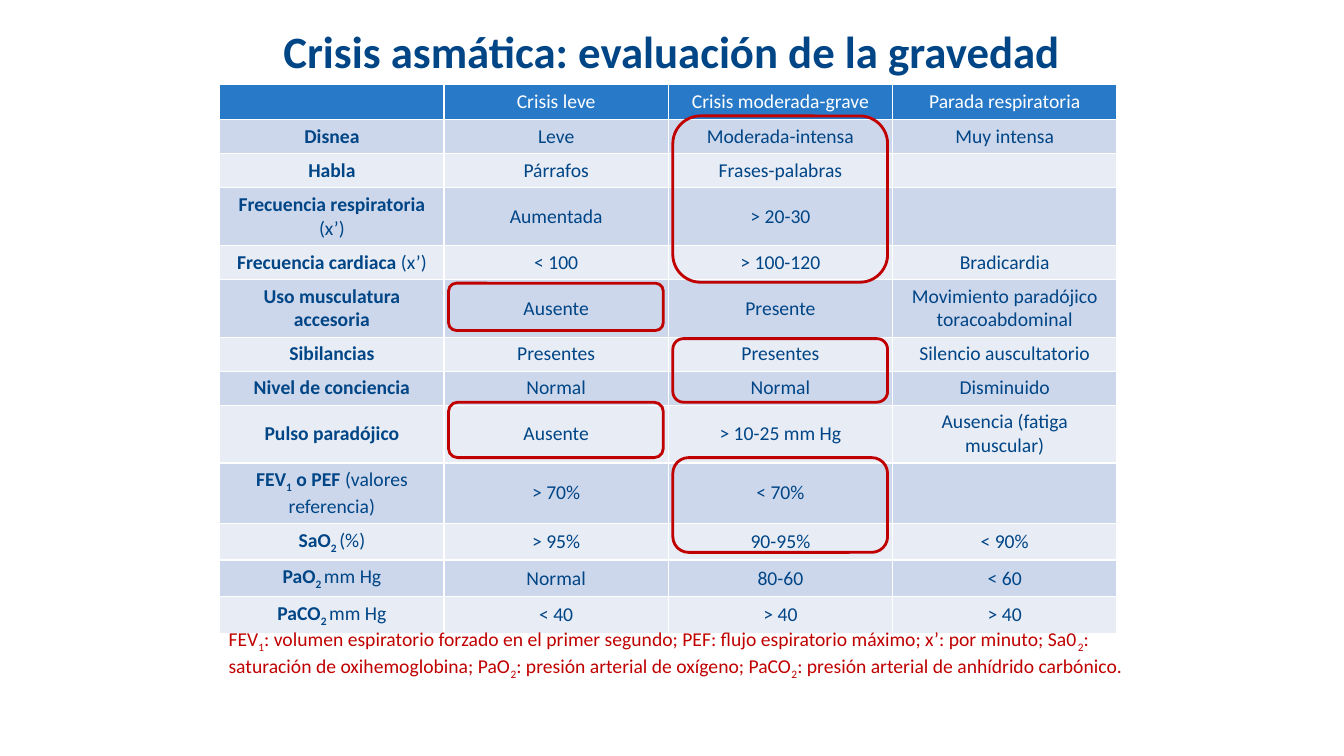
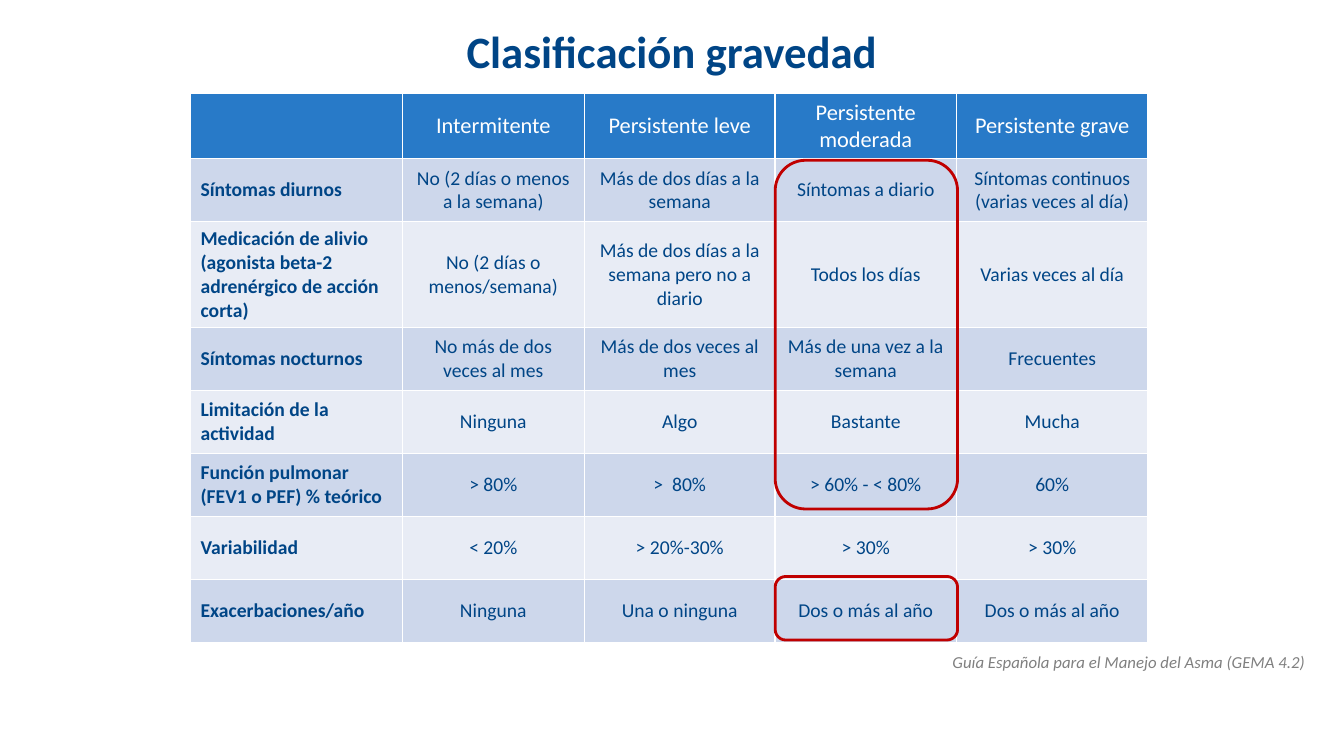
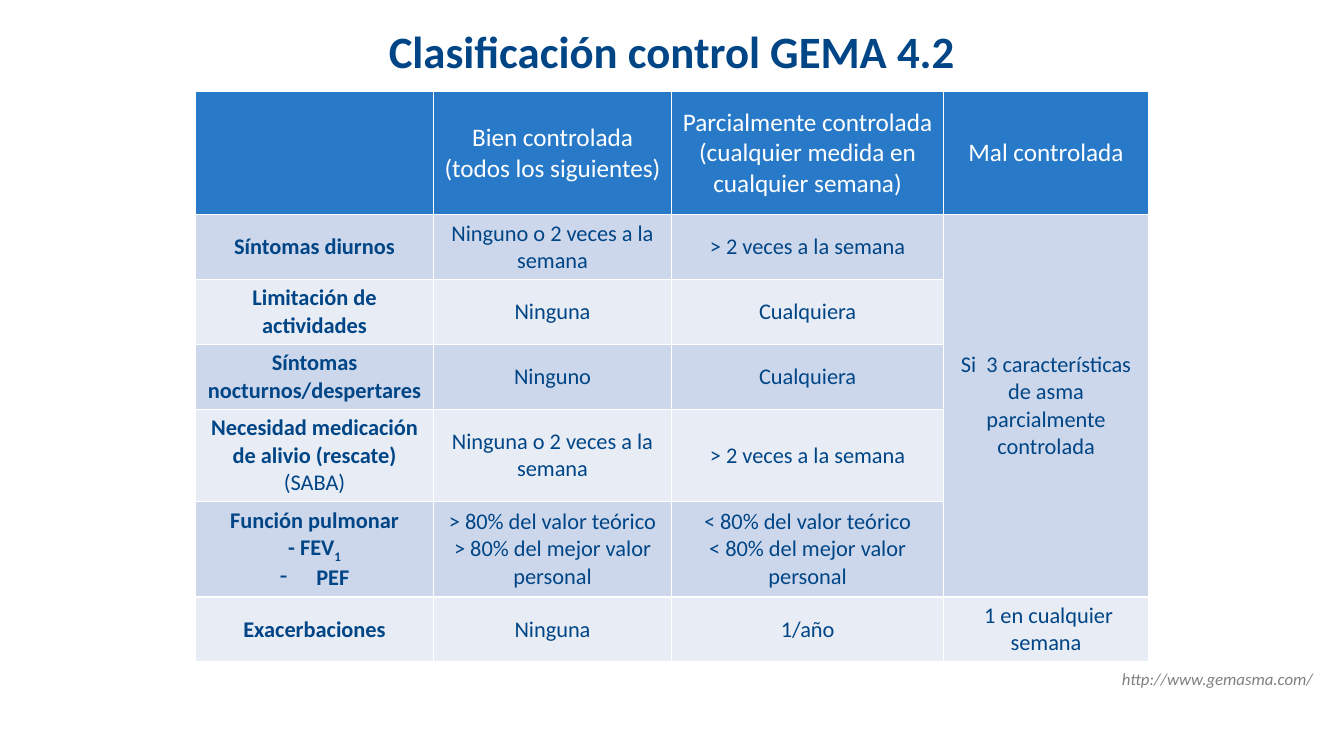
from lxml.etree import SubElement
from pptx import Presentation
from pptx.dml.color import RGBColor
from pptx.enum.shapes import MSO_SHAPE
from pptx.enum.text import MSO_ANCHOR, PP_ALIGN
from pptx.oxml.ns import qn
from pptx.util import Pt

COLORS = {
    "navy": "004586",
    "header": "287AC8",
    "band_dark": "CDD7EB",
    "band_light": "E8ECF5",
    "red": "C00000",
    "gray": "808080",
    "white": "FFFFFF",
}
FONT = "Calibri"
TITLE_ONLY = 5


def color(name):
    return RGBColor.from_string(COLORS[name])


# Text runs: (text, bold, subscript)
def plain(text):
    return text, False, False


def bold(text):
    return text, True, False


def sub(text, is_bold=True):
    return text, is_bold, True


def add_run(paragraph, run_data, size, color_name, italic=False):
    text, is_bold, is_subscript = run_data
    run = paragraph.add_run()
    run.text = text
    font = run.font
    font.name, font.size = FONT, Pt(size)
    font.bold, font.italic = is_bold, italic
    font.color.rgb = color(color_name)
    if is_subscript:
        run._r.get_or_add_rPr().set("baseline", "-25000")


def add_title_slide(presentation, title):
    slide = presentation.slides.add_slide(presentation.slide_layouts[TITLE_ONLY])
    shape = slide.shapes.title
    shape.left, shape.top, shape.width, shape.height = Pt(48), Pt(12), Pt(864), Pt(48)
    shape.text_frame.vertical_anchor = MSO_ANCHOR.MIDDLE
    paragraph = shape.text_frame.paragraphs[0]
    paragraph.alignment = PP_ALIGN.CENTER
    add_run(paragraph, bold(title), 32, "navy")
    return slide


def add_note(slide, box, runs, size, color_name, alignment=PP_ALIGN.LEFT, italic=False):
    shape = slide.shapes.add_textbox(*map(Pt, box))
    shape.text_frame.word_wrap = True
    paragraph = shape.text_frame.paragraphs[0]
    paragraph.alignment = alignment
    for run_data in runs:
        add_run(paragraph, run_data, size, color_name, italic)


def add_source(slide, left, top, text):
    add_note(slide, (left, top, 912, 23), [plain(text)], 12, "gray", PP_ALIGN.RIGHT, True)


def fill_cell(cell, content, size, color_name, alignment, is_bold):
    """Content is a string, or a list of paragraphs made of runs."""
    if isinstance(content, str):
        content = [[(line, is_bold, False)] for line in content.split("\n")]
    cell.vertical_anchor = MSO_ANCHOR.MIDDLE
    frame = cell.text_frame
    for index, runs in enumerate(content):
        paragraph = frame.add_paragraph() if index else frame.paragraphs[0]
        paragraph.alignment = alignment
        for run_data in runs:
            if run_data[0]:
                add_run(paragraph, run_data, size, color_name)
            else:
                # Keeps an empty cell from stretching its row
                SubElement(paragraph._p, qn("a:endParaRPr"), sz=str(size * 100))


def add_banded_table(slide, left, top, widths, heights, rows, header_size, body_size,
                     label_alignment=PP_ALIGN.CENTER):
    frame = slide.shapes.add_table(len(rows), len(widths), Pt(left), Pt(top),
                                   Pt(sum(widths)), Pt(sum(heights)))
    table = frame.table
    table.horz_banding = False
    for column, width in zip(table.columns, widths):
        column.width = Pt(width)
    for row, height in zip(table.rows, heights):
        row.height = Pt(height)
    for row_index, row in enumerate(rows):
        is_header = row_index == 0
        band = "header" if is_header else ("band_light", "band_dark")[row_index % 2]
        for column_index, content in enumerate(row):
            cell = table.cell(row_index, column_index)
            cell.fill.solid()
            cell.fill.fore_color.rgb = color(band)
            is_label = column_index == 0 and not is_header
            fill_cell(cell, content,
                      header_size if is_header else body_size,
                      "white" if is_header else "navy",
                      label_alignment if is_label else PP_ALIGN.CENTER,
                      is_label)
    return table


def add_highlight(slide, left, top, width, height):
    shape = slide.shapes.add_shape(MSO_SHAPE.ROUNDED_RECTANGLE,
                                   Pt(left), Pt(top), Pt(width), Pt(height))
    shape.shadow.inherit = False
    shape.fill.background()
    shape.line.color.rgb = color("red")
    shape.line.width = Pt(2)


def add_dash_bullet(paragraph, indent):
    properties = paragraph._p.get_or_add_pPr()
    properties.set("marL", str(Pt(indent)))
    properties.set("indent", str(-Pt(indent)))
    SubElement(properties, qn("a:buChar"), char="-")


def build_crisis_slide(presentation):
    slide = add_title_slide(presentation, "Crisis asmática: evaluación de la gravedad")
    rows = [
        ["", "Crisis leve", "Crisis moderada-grave", "Parada respiratoria"],
        ["Disnea", "Leve", "Moderada-intensa", "Muy intensa"],
        ["Habla", "Párrafos", "Frases-palabras", ""],
        [[[bold("Frecuencia respiratoria "), plain("(x’)")]], "Aumentada", "> 20-30", ""],
        [[[bold("Frecuencia cardiaca"), plain(" (x’)")]], "< 100", "> 100-120", "Bradicardia"],
        ["Uso musculatura accesoria", "Ausente", "Presente",
         "Movimiento paradójico toracoabdominal"],
        ["Sibilancias", "Presentes", "Presentes", "Silencio auscultatorio"],
        ["Nivel de conciencia", "Normal", "Normal", "Disminuido"],
        ["Pulso paradójico", "Ausente", "> 10-25 mm Hg", "Ausencia (fatiga muscular)"],
        [[[bold("FEV"), sub("1"), bold(" o PEF "), plain("(valores referencia)")]],
         "> 70%", "< 70%", ""],
        [[[bold("SaO"), sub("2 "), plain("(%)")]], "> 95%", "90-95%", "< 90%"],
        [[[bold("PaO"), sub("2 "), plain("mm Hg")]], "Normal", "80-60", "< 60"],
        [[[bold("PaCO"), sub("2 "), plain("mm Hg")]], "< 40", "> 40", "> 40"],
    ]
    left, column_width, single, double = 157, 160.2, 24, 40
    heights = [25] + [double if index in (3, 5, 8, 9) else single
                      for index in range(1, len(rows))]
    add_banded_table(slide, left, 60.5, [column_width] * 4, heights, rows, 14, 14)

    # Highlighted criteria: column, top, height
    for column, top, height in [(2, 82.8, 118.8), (1, 202.3, 33.8), (2, 241.9, 45.4),
                                (1, 287.3, 39.6), (2, 326.9, 67.7)]:
        add_highlight(slide, left + column * column_width + 3.2, top, 153.4, height)

    add_note(slide, (156.2, 444.2, 684, 41), [
        plain("FEV"), sub("1", False),
        plain(": volumen espiratorio forzado en el primer segundo; "
              "PEF: flujo espiratorio máximo; x’: por minuto; Sa0"), sub("2", False),
        plain(": saturación de oxihemoglobina; PaO"), sub("2", False),
        plain(": presión arterial de oxígeno; PaCO"), sub("2", False),
        plain(": presión arterial de anhídrido carbónico."),
    ], 14, "red")


def build_severity_slide(presentation):
    slide = add_title_slide(presentation, "Clasificación gravedad")
    rows = [
        ["", "Intermitente", "Persistente leve", "Persistente moderada", "Persistente grave"],
        ["Síntomas diurnos", "No (2 días o menos a la semana)", "Más de dos días a la semana",
         "Síntomas a diario", "Síntomas continuos (varias veces al día)"],
        ["Medicación de alivio (agonista beta-2 adrenérgico de acción corta)",
         "No (2 días o menos/semana)", "Más de dos días a la semana pero no a diario",
         "Todos los días", "Varias veces al día"],
        ["Síntomas nocturnos", "No más de dos veces al mes", "Más de dos veces al mes",
         "Más de una vez a la semana", "Frecuentes"],
        ["Limitación de la actividad", "Ninguna", "Algo", "Bastante", "Mucha"],
        ["Función pulmonar (FEV1 o PEF) % teórico", "> 80%", ">  80%", "> 60% - < 80%", "60%"],
        ["Variabilidad", "< 20%", "> 20%-30%", "> 30%", "> 30%"],
        ["Exacerbaciones/año", "Ninguna", "Una o ninguna", "Dos o más al año",
         "Dos o más al año"],
    ]
    left, widths = 136.1, [151.2, 130.3, 136.1, 129.6, 136.8]
    heights = [46, 45, 75.7] + [45] * 5
    add_banded_table(slide, left, 67, widths, heights, rows, 16, 14, PP_ALIGN.LEFT)
    for top, height in [(114.5, 249.1), (411.8, 45.4)]:
        add_highlight(slide, left + sum(widths[:3]), top, 130.3, height)
    add_source(slide, 27.4, 462.2, "Guía Española para el Manejo del Asma (GEMA 4.2)")


def build_control_slide(presentation):
    slide = add_title_slide(presentation, "Clasificación control GEMA 4.2")
    rows = [
        ["", "Bien controlada (todos los siguientes)",
         "Parcialmente controlada (cualquier medida en cualquier semana)", "Mal controlada"],
        ["Síntomas diurnos", "Ninguno o 2 veces a la semana", "> 2 veces a la semana",
         "Si  3 características de asma parcialmente controlada"],
        ["Limitación de actividades", "Ninguna", "Cualquiera", ""],
        ["Síntomas nocturnos/despertares", "Ninguno", "Cualquiera", ""],
        [[[bold("Necesidad medicación de alivio (rescate) "), plain("(SABA)")]],
         "Ninguna o 2 veces a la semana", "> 2 veces a la semana", ""],
        [[[bold("Función pulmonar")], [bold("- FEV"), sub("1")], [bold(" PEF")]],
         "> 80% del valor teórico\n> 80% del mejor valor personal",
         "< 80% del valor teórico\n< 80% del mejor valor personal", ""],
        ["Exacerbaciones", "Ninguna", "1/año", " 1 en cualquier semana"],
    ]
    table = add_banded_table(slide, 139.7, 65.5, [170, 170, 194.4, 146.2],
                             [87.8, 46, 46, 46, 66, 68, 46], rows, 18, 16)
    table.cell(1, 3).merge(table.cell(5, 3))
    add_dash_bullet(table.cell(5, 0).text_frame.paragraphs[2], 22.5)
    add_source(slide, 33.1, 473.8, "http://www.gemasma.com/")


def main():
    presentation = Presentation()
    presentation.slide_width, presentation.slide_height = Pt(960), Pt(540)
    build_crisis_slide(presentation)
    build_severity_slide(presentation)
    build_control_slide(presentation)
    presentation.save("out.pptx")


if __name__ == "__main__":
    main()
